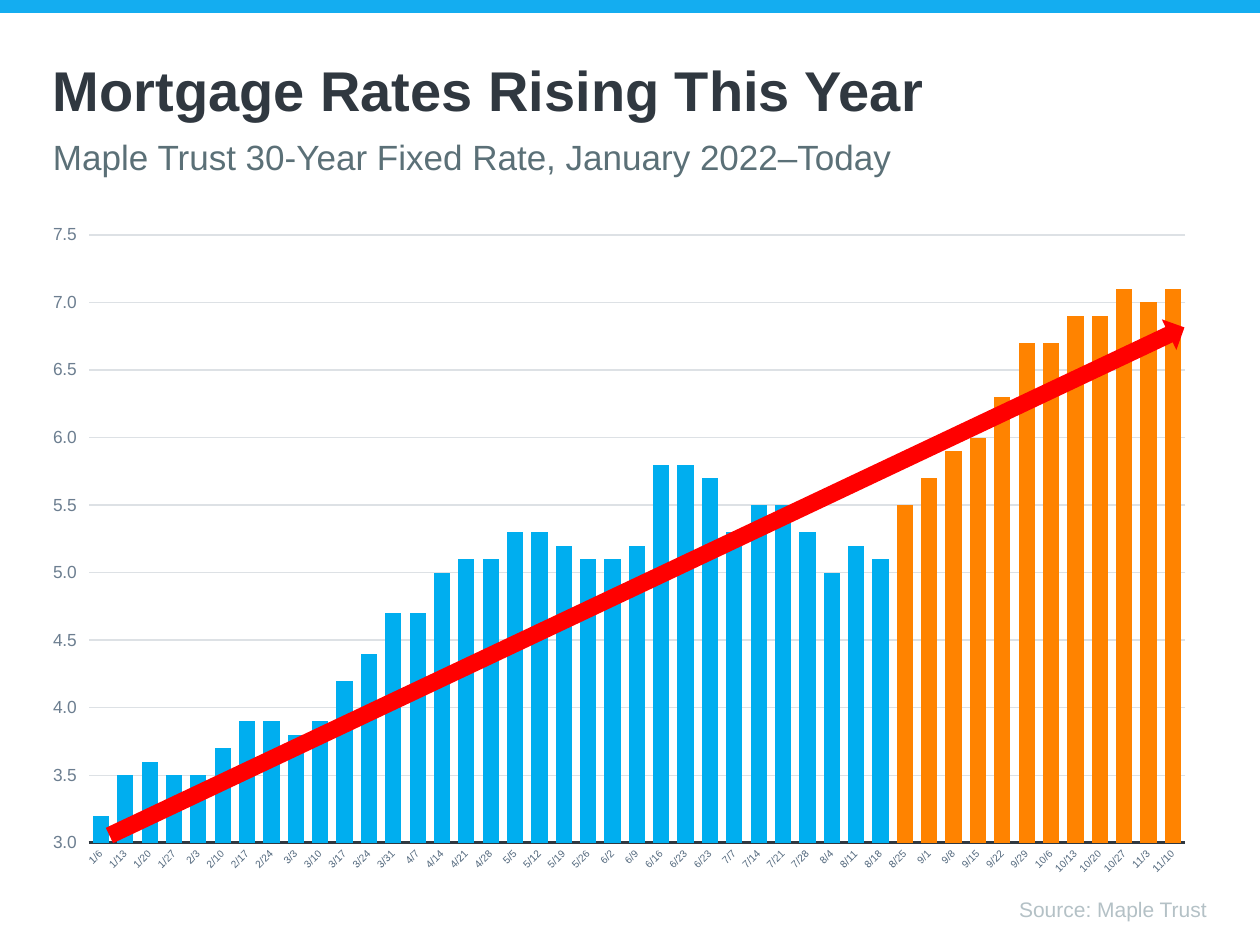
"""Build the slide on mortgage rates rising through 2022."""
from dataclasses import dataclass

from lxml.etree import SubElement
from pptx import Presentation
from pptx.chart.data import CategoryChartData
from pptx.dml.color import RGBColor
from pptx.enum.chart import XL_CHART_TYPE as ChartType, XL_TICK_MARK as TickMark
from pptx.enum.shapes import MSO_SHAPE as Shape
from pptx.enum.text import MSO_ANCHOR as Anchor, PP_ALIGN as Align
from pptx.oxml import parse_xml
from pptx.oxml.ns import nsdecls, qn
from pptx.util import Emu, Pt

EMU_PER_PX = 914400 / 126
FONT = "Arial"
COLORS = {
    "banner": "14ADF0", "ink": "303840", "subtitle": "5B7077",
    "source": "B4C1C6", "axis": "6C7E90", "grid": "DDE1E5",
    "early": "00AEEF", "recent": "FF8300", "trend": "FF0000",
}
DATES = (
    "1/6 1/13 1/20 1/27 2/3 2/10 2/17 2/24 3/3 3/10 3/17 3/24 3/31 4/7 4/14 "
    "4/21 4/28 5/5 5/12 5/19 5/26 6/2 6/9 6/16 6/23 6/23 7/7 7/14 7/21 7/28 "
    "8/4 8/11 8/18 8/25 9/1 9/8 9/15 9/22 9/29 10/6 10/13 10/20 10/27 11/3 11/10"
).split()
RATES = (
    3.2, 3.5, 3.6, 3.5, 3.5, 3.7, 3.9, 3.9, 3.8, 3.9, 4.2, 4.4, 4.7, 4.7, 5.0,
    5.1, 5.1, 5.3, 5.3, 5.2, 5.1, 5.1, 5.2, 5.8, 5.8, 5.7, 5.3, 5.5, 5.5, 5.3,
    5.0, 5.2, 5.1, 5.5, 5.7, 5.9, 6.0, 6.3, 6.7, 6.7, 6.9, 6.9, 7.1, 7.0, 7.1,
)
FIRST_RECENT = DATES.index("8/25")
PLOT_LAYOUT = {"x": 0.02, "y": 0.03, "w": 0.96, "h": 0.91}


@dataclass(frozen=True)
class Box:
    left: int
    top: int
    width: int
    height: int

    def emu(self) -> tuple:
        return tuple(px(v) for v in (self.left, self.top, self.width, self.height))


@dataclass(frozen=True)
class Label:
    box: Box
    text: str
    size: int
    color: str
    inset: int
    bold: bool = False
    align: Align = Align.LEFT
    spacing: float = 1.0


@dataclass(frozen=True)
class Block:
    box: Box
    kind: Shape
    color: str
    rotation: float = 0


CHART_BOX = Box(53, 215, 1155, 668)
BANNER = Block(Box(0, 0, 1260, 13), Shape.RECTANGLE, "banner")
TREND = Block(Box(630, -13, 34, 1189), Shape.UP_ARROW, "trend", 64.7)
LABELS = (
    Label(Box(53, 50, 1155, 49), "Mortgage Rates Rising This Year", 32, "ink", 6, bold=True),
    Label(Box(53, 132, 1155, 43), "Maple Trust 30-Year Fixed Rate, January 2022–Today",
          20, "subtitle", 3),
    Label(Box(53, 893, 1154, 30), "Source: Maple Trust", 12, "source", 6,
          align=Align.RIGHT, spacing=0.9),
)


def px(value: int) -> Emu:
    return Emu(round(value * EMU_PER_PX))


def rgb(name: str) -> RGBColor:
    return RGBColor.from_string(COLORS[name])


def style_font(font, size: int, color: str, bold: bool = False) -> None:
    font.name = FONT
    font.size = Pt(size)
    font.bold = bold
    font.color.rgb = rgb(color)


def draw_block(slide, block: Block) -> None:
    shape = slide.shapes.add_shape(block.kind, *block.box.emu())
    shape.shadow.inherit = False
    shape.fill.solid()
    shape.fill.fore_color.rgb = rgb(block.color)
    shape.line.fill.background()
    shape.rotation = block.rotation


def draw_label(slide, label: Label) -> None:
    frame = slide.shapes.add_textbox(*label.box.emu()).text_frame
    frame.word_wrap = True
    frame.vertical_anchor = Anchor.TOP
    frame.margin_left = frame.margin_right = frame.margin_bottom = 0
    frame.margin_top = px(label.inset)
    paragraph = frame.paragraphs[0]
    paragraph.alignment = label.align
    paragraph.line_spacing = label.spacing
    run = paragraph.add_run()
    run.text = label.text
    style_font(run.font, label.size, label.color, label.bold)


def set_plot_layout(chart) -> None:
    plot_area = chart._chartSpace.chart.plotArea
    for old in plot_area.findall(qn("c:layout")):
        plot_area.remove(old)
    layout = parse_xml(f"<c:layout {nsdecls('c')}><c:manualLayout/></c:layout>")
    settings = {"layoutTarget": "inner", "xMode": "edge", "yMode": "edge", **PLOT_LAYOUT}
    for tag, value in settings.items():
        SubElement(layout[0], qn(f"c:{tag}")).set("val", str(value))
    plot_area.insert(0, layout)


def style_axes(chart) -> None:
    dates, rates = chart.category_axis, chart.value_axis
    dates.major_tick_mark = dates.minor_tick_mark = TickMark.NONE
    dates.has_major_gridlines = False
    dates.format.line.color.rgb = rgb("ink")
    dates.format.line.width = Pt(1.5)
    style_font(dates.tick_labels.font, 6, "axis")
    dates._element.txPr.find(qn("a:bodyPr")).set("rot", "-2700000")

    rates.minimum_scale, rates.maximum_scale, rates.major_unit = 3, 7.5, 0.5
    rates.major_tick_mark = TickMark.OUTSIDE
    rates.minor_tick_mark = TickMark.NONE
    rates.format.line.fill.background()
    rates.major_gridlines.format.line.color.rgb = rgb("grid")
    rates.major_gridlines.format.line.width = Pt(0.75)
    rates.tick_labels.number_format = "0.0"
    rates.tick_labels.number_format_is_linked = False
    style_font(rates.tick_labels.font, 10, "axis")


def draw_chart(slide) -> None:
    data = CategoryChartData(number_format="0.0")
    data.categories = DATES
    data.add_series("Series 1", RATES)
    chart = slide.shapes.add_chart(ChartType.COLUMN_CLUSTERED, *CHART_BOX.emu(), data).chart
    chart.has_legend = chart.has_title = False
    style_font(chart.font, 10, "ink")
    plot = chart.plots[0]
    plot.gap_width = 50
    plot.vary_by_categories = False
    series = plot.series[0]
    series.format.fill.solid()
    series.format.fill.fore_color.rgb = rgb("early")
    for index in range(FIRST_RECENT, len(RATES)):
        fill = series.points[index].format.fill
        fill.solid()
        fill.fore_color.rgb = rgb("recent")
    style_axes(chart)
    set_plot_layout(chart)


def main() -> None:
    presentation = Presentation()
    presentation.slide_width, presentation.slide_height = px(1260), px(945)
    slide = presentation.slides.add_slide(presentation.slide_layouts[6])
    draw_block(slide, BANNER)
    for label in LABELS:
        draw_label(slide, label)
    draw_chart(slide)
    draw_block(slide, TREND)
    presentation.save("out.pptx")


if __name__ == "__main__":
    main()
